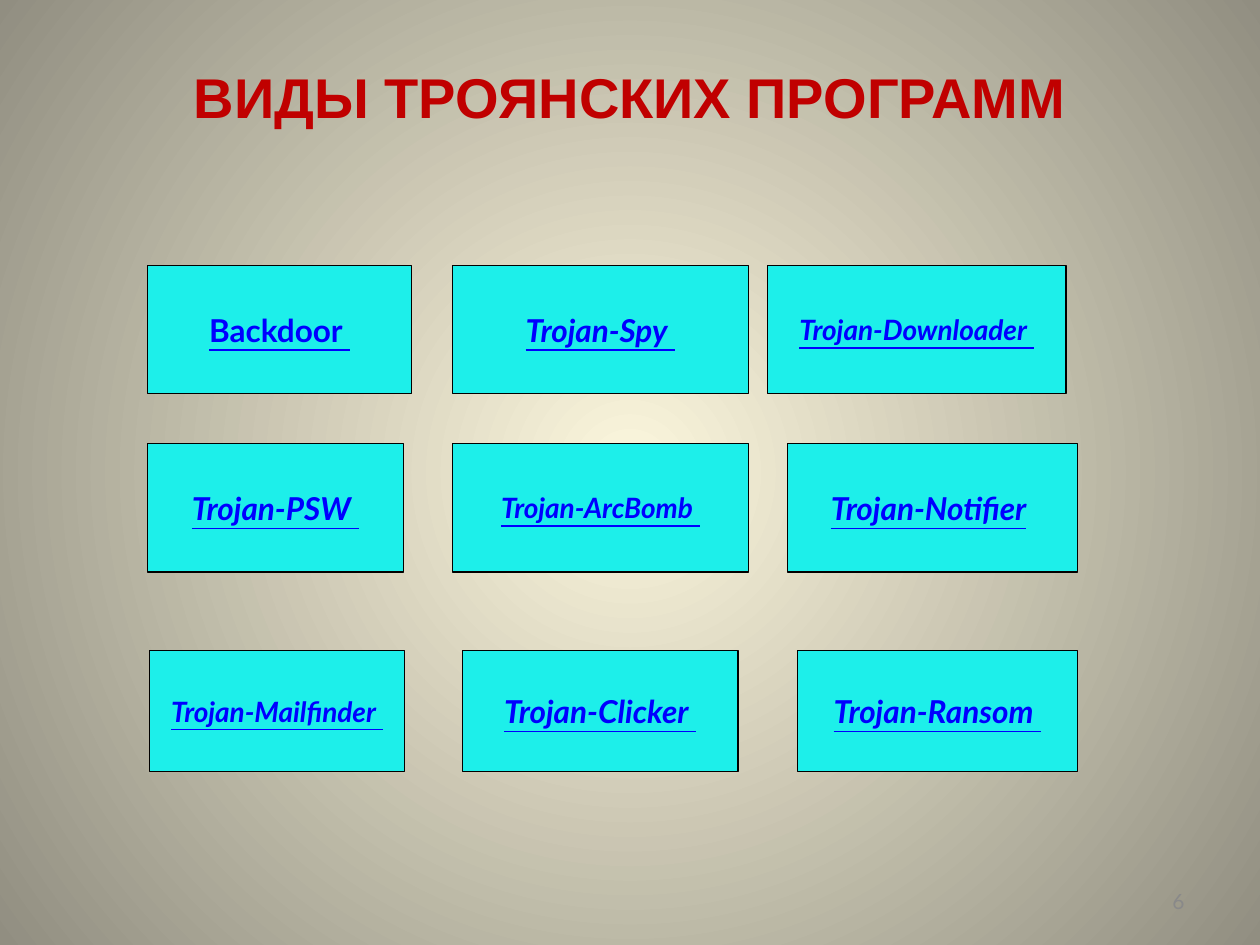
from dataclasses import dataclass

from lxml import etree
from pptx import Presentation
from pptx import util as u
from pptx.dml.color import RGBColor
from pptx.enum import shapes, text
from pptx.oxml.ns import qn


@dataclass(frozen=True)
class Theme:
    glow: str = "FCF7DD"
    edge: str = "918E81"
    title: str = "C00000"
    card: str = "1DEFEA"
    line: str = "000000"
    link: str = "0000FF"
    page: str = "898989"
    head: str = "Arial"
    body: str = "Lato"
    big: int = 32
    name: int = 18
    small: int = 16
    note: int = 12


def rgb(code):
    return RGBColor.from_string(code)


def write(para, words, face, size, color, bold=False, slant=False, under=False):
    run = para.add_run()
    run.text = words
    font = run.font
    font.name, font.size, font.color.rgb = face, u.Pt(size), rgb(color)
    font.bold, font.italic, font.underline = bold, slant, under


class Deck:
    def __init__(self, theme):
        self.theme = theme
        self.file = Presentation()
        self.file.slide_width, self.file.slide_height = u.Cm(25.4), u.Cm(19.05)
        self.slide = self.file.slides.add_slide(self.file.slide_layouts[6])

    def ground(self):
        fill = self.slide.background.fill
        fill.gradient()
        for stop, color in zip(fill.gradient_stops, (self.theme.glow, self.theme.edge)):
            stop.color.rgb = rgb(color)
        # Radial shading from the centre
        grad = self.slide.element.find(".//" + qn("a:gradFill"))
        lin = grad.find(qn("a:lin"))
        round_ = etree.Element(qn("a:path"), path="circle")
        sides = dict.fromkeys("ltrb", "50000")
        etree.SubElement(round_, qn("a:fillToRect"), **sides)
        grad.replace(lin, round_)

    def label(self, box, words, align, **style):
        frame = self.slide.shapes.add_textbox(*map(u.Cm, box)).text_frame
        frame.word_wrap = True
        frame.vertical_anchor = text.MSO_ANCHOR.MIDDLE
        para = frame.paragraphs[0]
        para.alignment = align
        write(para, words, **style)

    def card(self, box, words, size, slant=True, tail=True, flow=False):
        theme = self.theme
        kind = shapes.MSO_SHAPE
        form = kind.FLOWCHART_PROCESS if flow else kind.RECTANGLE
        shape = self.slide.shapes.add_shape(form, *map(u.Cm, box))
        shape.shadow.inherit = False
        shape.fill.solid()
        shape.fill.fore_color.rgb = rgb(theme.card)
        shape.line.color.rgb = rgb(theme.line)
        shape.line.width = u.Pt(0.75)
        frame = shape.text_frame
        frame.word_wrap = False
        frame.vertical_anchor = text.MSO_ANCHOR.MIDDLE
        para = frame.paragraphs[0]
        para.alignment = text.PP_ALIGN.CENTER
        style = dict(face=theme.body, size=size, color=theme.link, bold=True)
        write(para, words, slant=slant, under=True, **style)
        write(para, " ", under=tail, **style)


def main():
    theme = Theme()
    deck = Deck(theme)
    deck.ground()

    # Title
    deck.label((1.27, 0.76, 22.86, 2.36), "ВИДЫ ТРОЯНСКИХ ПРОГРАММ",
               text.PP_ALIGN.CENTER, face=theme.head, size=theme.big,
               color=theme.title, bold=True)

    # Cards: each row has a top and height, each card a left, width and name
    big, small = theme.name, theme.small
    rows = [
        (5.36, 2.57, [
            (2.97, 5.33, "Backdoor", big, dict(slant=False, flow=True)),
            (9.12, 5.97, "Trojan-Spy", big, {}),
            (15.47, 6.02, "Trojan-Downloader", small, {})]),
        (8.94, 2.59, [
            (2.97, 5.16, "Trojan-PSW", big, {}),
            (9.12, 5.97, "Trojan-ArcBomb", small, dict(flow=True)),
            (15.88, 5.84, "Trojan-Notifier", big, dict(tail=False))]),
        (13.11, 2.44, [
            (3.02, 5.13, "Trojan-Mailfinder", small, {}),
            (9.32, 5.56, "Trojan-Clicker", big, dict(flow=True)),
            (16.08, 5.64, "Trojan-Ransom", big, {})]),
    ]
    for top, high, cards in rows:
        for left, wide, name, size, more in cards:
            deck.card((left, top, wide, high), name, size, **more)

    # Page number
    deck.label((18.2, 17.66, 5.93, 1.01), "6", text.PP_ALIGN.RIGHT,
               face=theme.body, size=theme.note, color=theme.page)

    deck.file.save("out.pptx")


if __name__ == "__main__":
    main()
